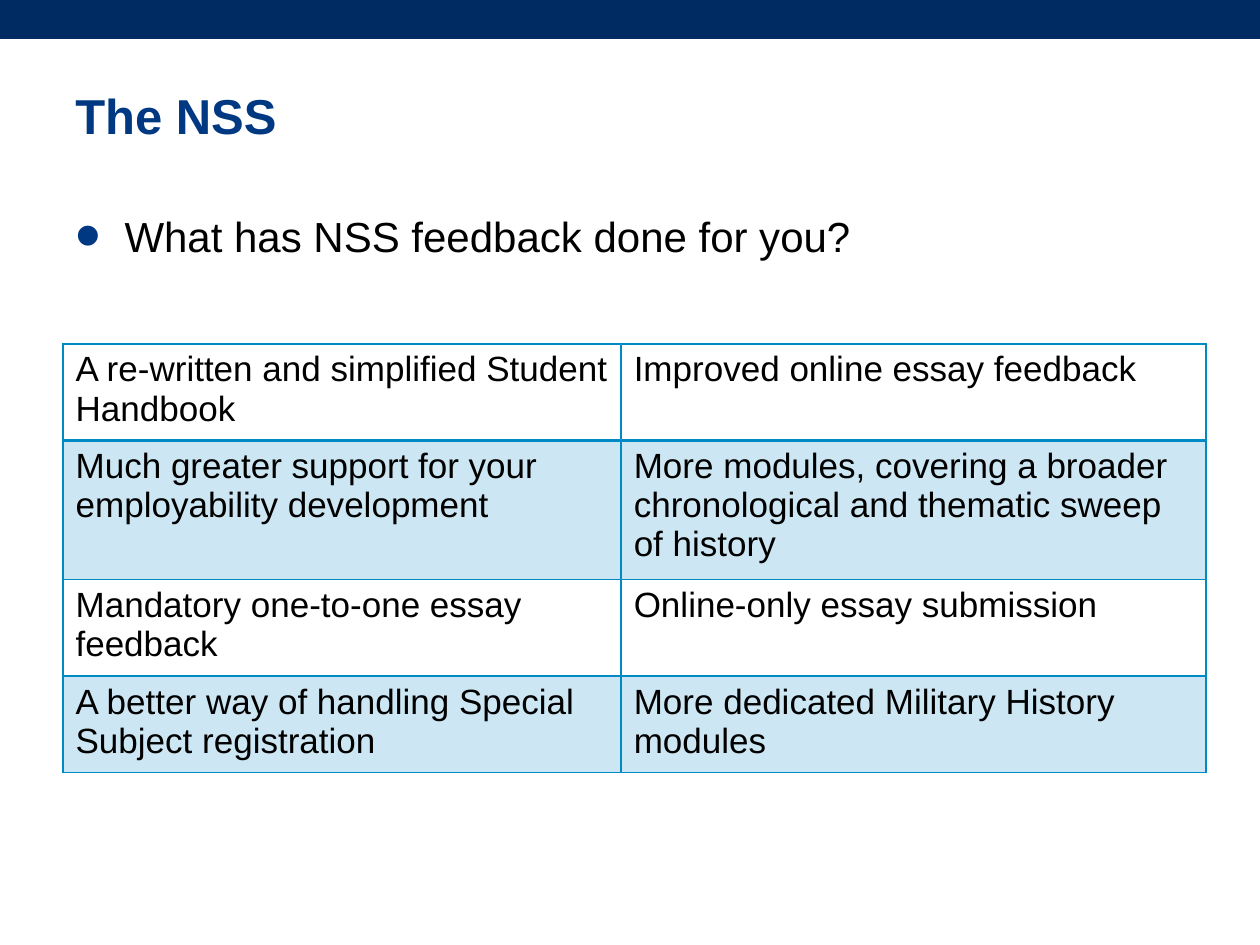
"""Build a slide on what student survey feedback has changed."""
from dataclasses import dataclass

from lxml import etree
from pptx import Presentation
from pptx import util as u
from pptx.dml.color import RGBColor
from pptx.enum import shapes, text
from pptx.oxml.ns import qn

WIDTH, HEIGHT = u.Inches(10), u.Inches(7.5)
NAVY = RGBColor(0x00, 0x2A, 0x62)
BLUE = RGBColor(0x00, 0x38, 0x82)
CYAN = RGBColor(0x00, 0x8A, 0xC4)
BLACK = RGBColor(0x00, 0x00, 0x00)
FONT = "Arial"
LEFT = 0.05
COLUMNS = (4.43, 4.64)


@dataclass(frozen=True)
class Heading:
    """A text box placed by shares of the slide's size."""
    wording: str
    top: float
    width: float
    height: float
    size: int
    color: RGBColor
    anchor: text.MSO_ANCHOR
    bold: bool = False
    bullet: bool = False


@dataclass(frozen=True)
class TableRow:
    """One row of improvements with its height in inches."""
    height: float
    cells: tuple[str, str]


HEADINGS = (
    Heading("What has NSS feedback done for you?", 0.216, 0.86, 0.096, 24, BLACK,
            text.MSO_ANCHOR.TOP, bullet=True),
    Heading("The NSS", 0.08, 0.907, 0.084, 28, BLUE, text.MSO_ANCHOR.MIDDLE, bold=True),
)
ROWS = (
    TableRow(0.72, ("A re-written and simplified Student Handbook",
                    "Improved online essay feedback")),
    TableRow(1.03, ("Much greater support for your employability development",
                    "More modules, covering a broader chronological and thematic sweep of history")),
    TableRow(0.72, ("Mandatory one-to-one essay feedback",
                    "Online-only essay submission")),
    TableRow(0.72, ("A better way of handling Special Subject registration",
                    "More dedicated Military History modules")),
)


def add_run(paragraph, wording: str, size: int, color: RGBColor, bold: bool = False) -> None:
    """Add one styled run to a paragraph."""
    run = paragraph.add_run()
    run.text = wording
    run.font.name, run.font.size, run.font.bold = FONT, u.Pt(size), bold
    run.font.color.rgb = color


def add_bullet(paragraph) -> None:
    """Give a paragraph a large blue bullet and a hanging indent."""
    properties = paragraph._p.get_or_add_pPr()
    properties.set("marL", str(u.Inches(0.39)))
    properties.set("indent", str(u.Inches(-0.39)))
    color = etree.SubElement(properties, qn("a:buClr"))
    etree.SubElement(color, qn("a:srgbClr"), val=str(BLUE))
    etree.SubElement(properties, qn("a:buSzPct"), val="175000")
    etree.SubElement(properties, qn("a:buFont"), typeface=FONT)
    etree.SubElement(properties, qn("a:buChar"), char="•")


def add_heading(slide, heading: Heading) -> None:
    """Draw one heading as a wrapped text box."""
    box = slide.shapes.add_textbox(
        int(WIDTH * LEFT), int(HEIGHT * heading.top),
        int(WIDTH * heading.width), int(HEIGHT * heading.height))
    frame = box.text_frame
    frame.word_wrap = True
    frame.vertical_anchor = heading.anchor
    paragraph = frame.paragraphs[0]
    if heading.bullet:
        add_bullet(paragraph)
    add_run(paragraph, heading.wording, heading.size, heading.color, heading.bold)


def set_borders(cell, widths: dict[str, float]) -> None:
    """Draw the borders of a cell, given side letters and widths in points."""
    properties = cell._tc.get_or_add_tcPr()
    for index, (side, width) in enumerate(widths.items()):
        line = etree.Element(qn(f"a:ln{side}"), w=str(u.Pt(width)))
        fill = etree.SubElement(line, qn("a:solidFill"))
        etree.SubElement(fill, qn("a:srgbClr"), val=str(CYAN))
        properties.insert(index, line)


def fill_cell(cell, shaded: bool) -> None:
    """Tint a shaded cell and leave any other cell clear."""
    if not shaded:
        cell.fill.background()
        return
    cell.fill.solid()
    cell.fill.fore_color.rgb = CYAN
    color = cell._tc.tcPr.find(f".//{qn('a:srgbClr')}")
    etree.SubElement(color, qn("a:alpha"), val="20000")


def add_improvements(slide, rows: tuple[TableRow, ...]) -> None:
    """Draw the banded table of improvements."""
    frame = slide.shapes.add_table(
        len(rows), len(COLUMNS), int(WIDTH * LEFT), u.Inches(2.73),
        u.Inches(sum(COLUMNS)), u.Inches(sum(row.height for row in rows)))
    table = frame.table
    for column, width in zip(table.columns, COLUMNS):
        column.width = u.Inches(width)
    for index, row in enumerate(rows):
        table.rows[index].height = u.Inches(row.height)
        top, bottom = (2 if index == 1 else 1), (2 if index == 0 else 1)
        for cell, wording in zip(table.rows[index].cells, row.cells):
            add_run(cell.text_frame.paragraphs[0], wording, 20, BLACK)
            fill_cell(cell, shaded=index % 2 == 1)
            set_borders(cell, {"L": 1, "R": 1, "T": top, "B": bottom})


def main() -> None:
    """Build and save the presentation."""
    presentation = Presentation()
    presentation.slide_width, presentation.slide_height = WIDTH, HEIGHT
    slide = presentation.slides.add_slide(presentation.slide_layouts[6])
    banner = slide.shapes.add_shape(
        shapes.MSO_SHAPE.RECTANGLE, 0, 0, WIDTH, u.Inches(0.31))
    banner.shadow.inherit = False
    banner.fill.solid()
    banner.fill.fore_color.rgb = NAVY
    banner.line.fill.background()
    for heading in HEADINGS:
        add_heading(slide, heading)
    add_improvements(slide, ROWS)
    presentation.save("out.pptx")


if __name__ == "__main__":
    main()
